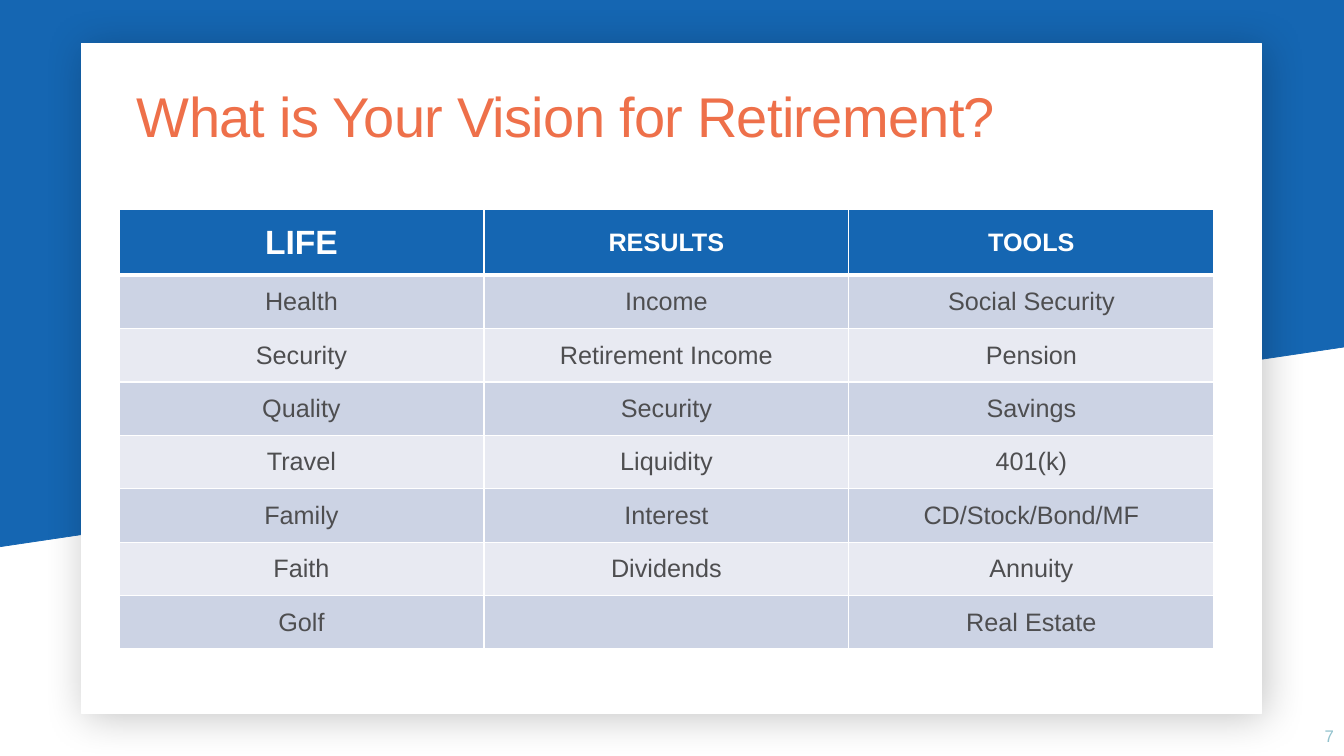
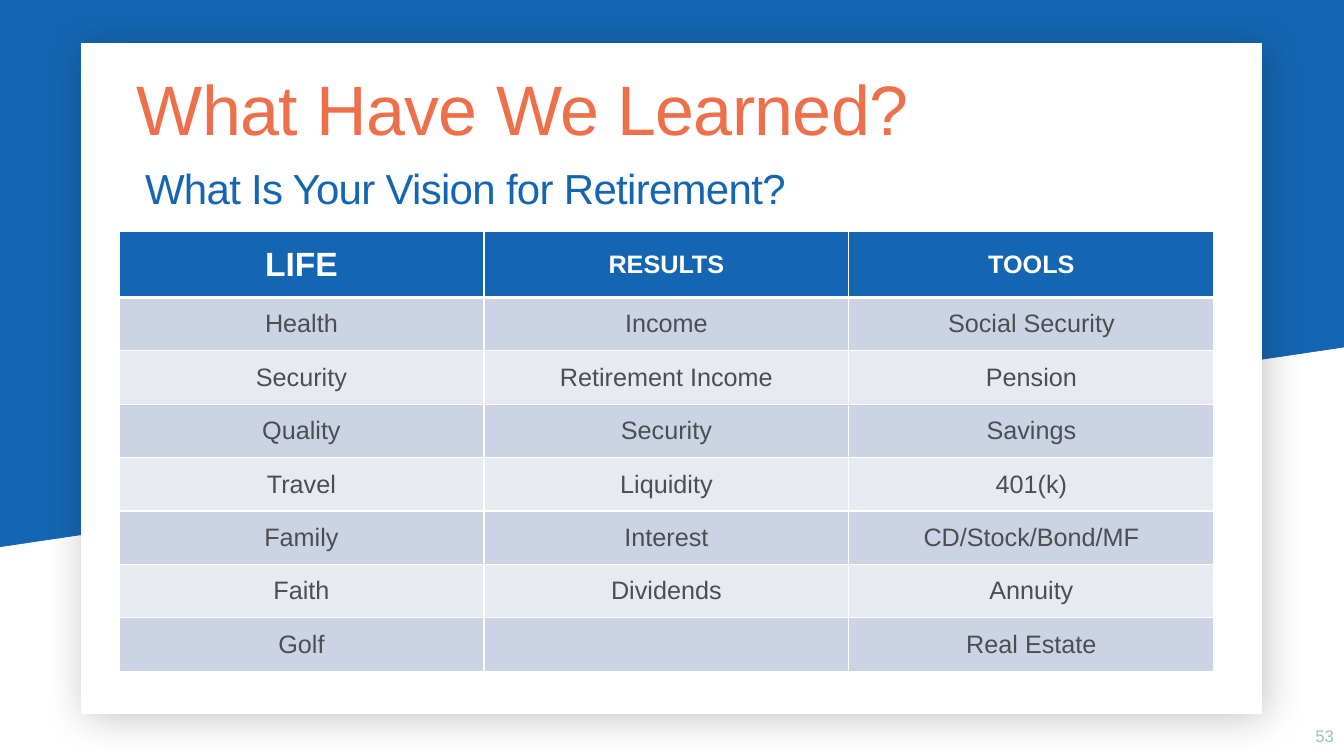
import pptx
import pptx.util
import pptx.dml.color
import pptx.enum.shapes
import pptx.enum.text
import pptx.oxml
import pptx.oxml.ns

Inches = pptx.util.Inches
Pt = pptx.util.Pt
ALIGN = pptx.enum.text.PP_ALIGN
ANCHOR = pptx.enum.text.MSO_ANCHOR

FONT = "Arial"
COLORS = {
    "white": "FFFFFF",
    "blue": "1566B2",
    "orange": "EE704A",
    "number": "92C2CD",
    "body": "4E4E50",
    "band_dark": "CCD3E4",
    "band_light": "E8EAF2",
    "shadow": "000000",
}
NAMESPACE = pptx.oxml.ns.nsdecls("a")

BACKDROP_POINTS = [(-0.03, -0.01), (13.35, -0.03), (13.35, 3.44), (-0.04, 5.43)]
COLUMN_WIDTH = 3.62
HEADER_HEIGHT = 0.65
ROW_HEIGHT = 0.53
VISION_ROWS = [
    ("LIFE", "RESULTS", "TOOLS"),
    ("Health", "Income", "Social Security"),
    ("Security", "Retirement Income", "Pension"),
    ("Quality", "Security", "Savings"),
    ("Travel", "Liquidity", "401(k)"),
    ("Family", "Interest", "CD/Stock/Bond/MF"),
    ("Faith", "Dividends", "Annuity"),
    ("Golf", "", "Real Estate"),
]


def color(name):
    return pptx.dml.color.RGBColor.from_string(COLORS[name])


def add_run(para, text, size, color_name, bold=False):
    span = para.add_run()
    span.text = text
    span.font.name = FONT
    span.font.size = Pt(size)
    span.font.bold = bold
    span.font.color.rgb = color(color_name)
    return span


def paint(shape, color_name):
    shape.shadow.inherit = False
    shape.fill.solid()
    shape.fill.fore_color.rgb = color(color_name)
    shape.line.color.rgb = color(color_name)
    shape.line.width = Pt(0.5)


def add_text_box(page, left, top, width, height, anchor):
    box = page.shapes.add_textbox(Inches(left), Inches(top), Inches(width), Inches(height))
    box.text_frame.word_wrap = True
    box.text_frame.vertical_anchor = anchor
    return box.text_frame.paragraphs[0]


def add_page_number(page, number):
    para = add_text_box(page, 10.33, 7.1, 3, 0.4, ANCHOR.MIDDLE)
    para.alignment = ALIGN.RIGHT
    add_run(para, str(number), 12, "number")


def add_backdrop(page):
    points = [(Inches(x), Inches(y)) for x, y in BACKDROP_POINTS]
    builder = page.shapes.build_freeform(*points[0])
    builder.add_line_segments(points[1:], close=True)
    paint(builder.convert_to_shape(), "blue")


def add_card(page):
    card = page.shapes.add_shape(
        pptx.enum.shapes.MSO_SHAPE.RECTANGLE,
        Inches(0.81), Inches(0.43), Inches(11.7), Inches(6.65),
    )
    paint(card, "white")
    effects = card._element.spPr.find(pptx.oxml.ns.qn("a:effectLst"))
    effects.append(pptx.oxml.parse_xml(
        f'<a:outerShdw {NAMESPACE} blurRad="{Pt(30.5)}" dist="{Pt(4)}" '
        f'dir="{45 * 60000}" algn="tl" rotWithShape="0">'
        f'<a:srgbClr val="{COLORS["shadow"]}"><a:alpha val="23000"/></a:srgbClr>'
        f'</a:outerShdw>'
    ))


def add_heading(page, text, left, top, height, size, color_name):
    para = add_text_box(page, left, top, 10.78, height, ANCHOR.TOP)
    para.line_spacing = 0.9
    span = add_run(para, text, size, color_name)
    span.font._element.set("spc", "-50")


def set_borders(cell, top, bottom):
    properties = cell._tc.get_or_add_tcPr()
    for side, width in (("L", 1), ("R", 1), ("T", top), ("B", bottom)):
        properties.append(pptx.oxml.parse_xml(
            f'<a:ln{side} {NAMESPACE} w="{Pt(width)}"><a:solidFill>'
            f'<a:srgbClr val="{COLORS["white"]}"/></a:solidFill></a:ln{side}>'
        ))


def fill_cell(cell, text, row, column):
    header = row == 0
    set_borders(cell, top=3 if row == 1 else 1, bottom=3 if header else 1)
    band = "band_dark" if row % 2 else "band_light"
    cell.fill.solid()
    cell.fill.fore_color.rgb = color("blue" if header else band)
    cell.vertical_anchor = ANCHOR.MIDDLE
    para = cell.text_frame.paragraphs[0]
    para.alignment = ALIGN.CENTER
    if text:
        size = 24 if header and column == 0 else 18
        add_run(para, text, size, "white" if header else "body", bold=header)


def add_vision_table(page, top):
    column_count = len(VISION_ROWS[0])
    height = HEADER_HEIGHT + ROW_HEIGHT * (len(VISION_ROWS) - 1)
    table = page.shapes.add_table(
        len(VISION_ROWS), column_count, Inches(1.18), Inches(top),
        Inches(COLUMN_WIDTH * column_count), Inches(height),
    ).table
    table.first_row = False
    table.horz_banding = False
    for column in table.columns:
        column.width = Inches(COLUMN_WIDTH)
    for row, texts in enumerate(VISION_ROWS):
        table.rows[row].height = Inches(ROW_HEIGHT if row else HEADER_HEIGHT)
        for column, text in enumerate(texts):
            fill_cell(table.cell(row, column), text, row, column)


def add_page(deck, number):
    page = deck.slides.add_slide(deck.slide_layouts[6])
    page.background.fill.solid()
    page.background.fill.fore_color.rgb = color("white")
    add_page_number(page, number)
    add_backdrop(page)
    add_card(page)
    return page


def main():
    deck = pptx.Presentation()
    deck.slide_width = Inches(13.33)
    deck.slide_height = Inches(7.5)

    page = add_page(deck, 7)
    add_heading(page, "What is Your Vision for Retirement?", 1.26, 0.84, 0.87, 40, "orange")
    add_vision_table(page, 2.08)

    page = add_page(deck, 53)
    add_heading(page, "What Is Your Vision for Retirement?", 1.34, 1.62, 0.58, 30, "blue")
    add_heading(page, "What Have We Learned?", 1.26, 0.7, 0.87, 50, "orange")
    add_vision_table(page, 2.3)

    deck.save("out.pptx")


if __name__ == "__main__":
    main()
